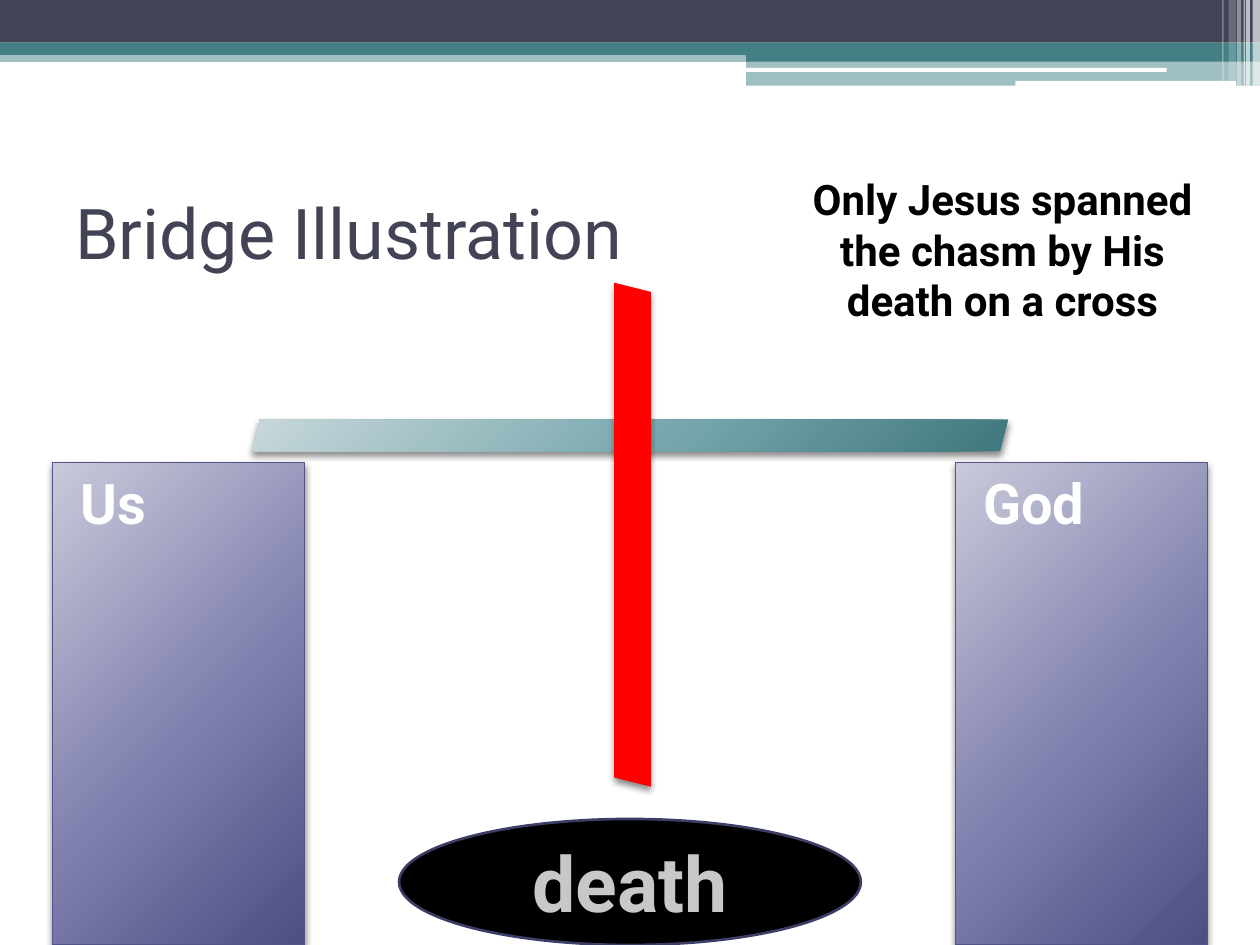
from lxml import etree
from pptx import Presentation
from pptx.dml.color import RGBColor
from pptx.enum.shapes import MSO_SHAPE
from pptx.enum.text import MSO_ANCHOR, PP_ALIGN
from pptx.oxml.ns import qn
from pptx.util import Cm, Pt

RECT, ROUND = MSO_SHAPE.RECTANGLE, MSO_SHAPE.ROUNDED_RECTANGLE
OVAL, SLANT = MSO_SHAPE.OVAL, MSO_SHAPE.PARALLELOGRAM
TOP, MIDDLE = MSO_ANCHOR.TOP, MSO_ANCHOR.MIDDLE
LEFT, CENTER = PP_ALIGN.LEFT, PP_ALIGN.CENTER

FONT = "Roboto"
WIDTH, HEIGHT = 25.4, 19.05
NAVY, TEAL, WHITE, BLACK, RED = "424456", "438086", "FFFFFF", "000000", "FF0000"
PILLAR_STOPS = ((0, "C9C9DA"), (55, "7F80AE"), (100, "4D4E81"))
BEAM_STOPS = ((0, "C7D7DA"), (55, "77A7AD"), (100, "3E777D"))


def rgb(value):
    return RGBColor.from_string(value)


def sub(parent, tag, **attrs):
    return etree.SubElement(parent, qn(tag), {k: str(v) for k, v in attrs.items()})


def add_color(parent, color, alpha=100):
    clr = sub(parent, "a:srgbClr", val=color)
    if alpha < 100:
        sub(clr, "a:alpha", val=alpha * 1000)


def add_shape(slide, kind, box, color, alpha=100, line=None):
    s = slide.shapes.add_shape(kind, *map(Cm, box))
    s.shadow.inherit = False
    s.fill.solid()
    s.fill.fore_color.rgb = rgb(color)
    if alpha < 100:
        clr = s.fill._xPr.find(".//" + qn("a:srgbClr"))
        sub(clr, "a:alpha", val=alpha * 1000)
    if line:
        s.line.color.rgb = rgb(line[0])
        s.line.width = Pt(line[1])
    else:
        s.line.fill.background()
    return s


def add_gradient(s, stops):
    """Radial gradient centred beyond the top left corner."""
    s.fill.gradient()
    grad = s._element.spPr.find(qn("a:gradFill"))
    for child in list(grad):
        grad.remove(child)
    stop_list = sub(grad, "a:gsLst")
    for pos, color in stops:
        add_color(sub(stop_list, "a:gs", pos=pos * 1000), color)
    circle = sub(grad, "a:path", path="circle")
    sub(circle, "a:fillToRect", l=-40000, t=-90000, r=140000, b=190000)


def add_shadow(s):
    effects = s._element.spPr.find(qn("a:effectLst"))
    shadow = sub(effects, "a:outerShdw", blurRad=Pt(4), dist=Pt(2),
                 dir=90 * 60000, algn="ctr", rotWithShape=0)
    add_color(shadow, BLACK, 45)


def write(s, text, size, color, bold=True, align=CENTER, anchor=MIDDLE):
    tf = s.text_frame
    tf.word_wrap = True
    tf.vertical_anchor = anchor
    p = tf.paragraphs[0]
    p.alignment = align
    r = p.add_run()
    r.text = text
    r.font.name, r.font.size, r.font.bold = FONT, Pt(size), bold
    r.font.color.rgb = rgb(color)
    return p


def add_text(slide, box, *args, **kwargs):
    write(slide.shapes.add_textbox(*map(Cm, box)), *args, **kwargs)


def header(slide, left, top, width):
    # Bands: kind, x, y, width, height, colour, opacity
    mid = 15.04
    bands = (
        (RECT, 0, 1.02, width, 0.23, TEAL, 50),
        (RECT, 0, 0, width, 0.86, NAVY, 100),
        (RECT, 0, 0.86, width, 0.25, TEAL, 100),
        (RECT, mid, 0.99, width - mid, 0.25, TEAL, 100),
        (RECT, mid, 1.22, width - mid, 0.51, TEAL, 50),
        (ROUND, mid, 1.37, 8.48, 0.08, WHITE, 100),
        (ROUND, 20.47, 1.63, 4.45, 0.1, WHITE, 100),
    )
    for kind, x, y, w, h, color, alpha in bands:
        add_shape(slide, kind, (left + x, top + y, w, h), color, alpha)
    # Thin stripes: distance from right edge, width, height, opacity
    stripes = ((0.15, 0.15, 1.73, 65), (0.28, 0.08, 1.73, 65),
               (0.33, 0.03, 1.73, 60), (0.46, 0.08, 1.73, 40),
               (0.63, 0.15, 1.63, 20), (0.76, 0.03, 1.63, 30))
    for inset, w, h, alpha in stripes:
        add_shape(slide, RECT, (left + width - inset, top, w, h), WHITE, alpha)


def pillar(slide, box, label):
    s = add_shape(slide, RECT, box, WHITE, line=("53548A", 0.75))
    add_gradient(s, PILLAR_STOPS)
    add_shadow(s)
    p = write(s, label, 32, WHITE, align=LEFT, anchor=TOP)
    p.space_before = Pt(3)
    props = p._p.get_or_add_pPr()
    props.set("marL", str(Cm(1.02)))
    props.set("indent", str(Cm(-0.71)))


def cross(slide, left, top):
    beam = add_shape(slide, SLANT, (left, top, 15.24, 0.64), WHITE)
    add_gradient(beam, BEAM_STOPS)
    add_shadow(beam)
    post = add_shape(slide, SLANT, (left + 2.59, top + 1.95, 10.16, 0.74), RED)
    post.rotation = 90
    add_shadow(post)


def bridge(slide, left, top, width, height):
    pillar_w, pillar_top = 5.08, 0.86
    for x, label in ((0, "Us"), (width - pillar_w, "God")):
        pillar(slide, (left + x, top + pillar_top, pillar_w, height - pillar_top), label)
    cross(slide, left + 4.02, top)
    # Chasm between the pillars
    oval_w, oval_h = 9.31, 2.54
    s = add_shape(slide, OVAL, (left + (width - oval_w) / 2, top + height - oval_h,
                                oval_w, oval_h), BLACK, line=("3D3E66", 1.5))
    write(s, "death", 44, "C8C8C8")


def main():
    prs = Presentation()
    prs.slide_width, prs.slide_height = Cm(WIDTH), Cm(HEIGHT)
    slide = prs.slides.add_slide(prs.slide_layouts[6])
    header(slide, 0, 0, WIDTH)
    add_text(slide, (1.27, 3.18, 22.86, 2.97), "Bridge Illustration", 40, NAVY,
             bold=False, align=LEFT)
    bridge(slide, 1.06, 8.46, 23.28, HEIGHT - 8.46)
    add_text(slide, (16.08, 3.38, 8.26, 4.37),
             "Only Jesus spanned the chasm by His death on a cross", 24, BLACK,
             anchor=TOP)
    prs.save("out.pptx")


if __name__ == "__main__":
    main()
